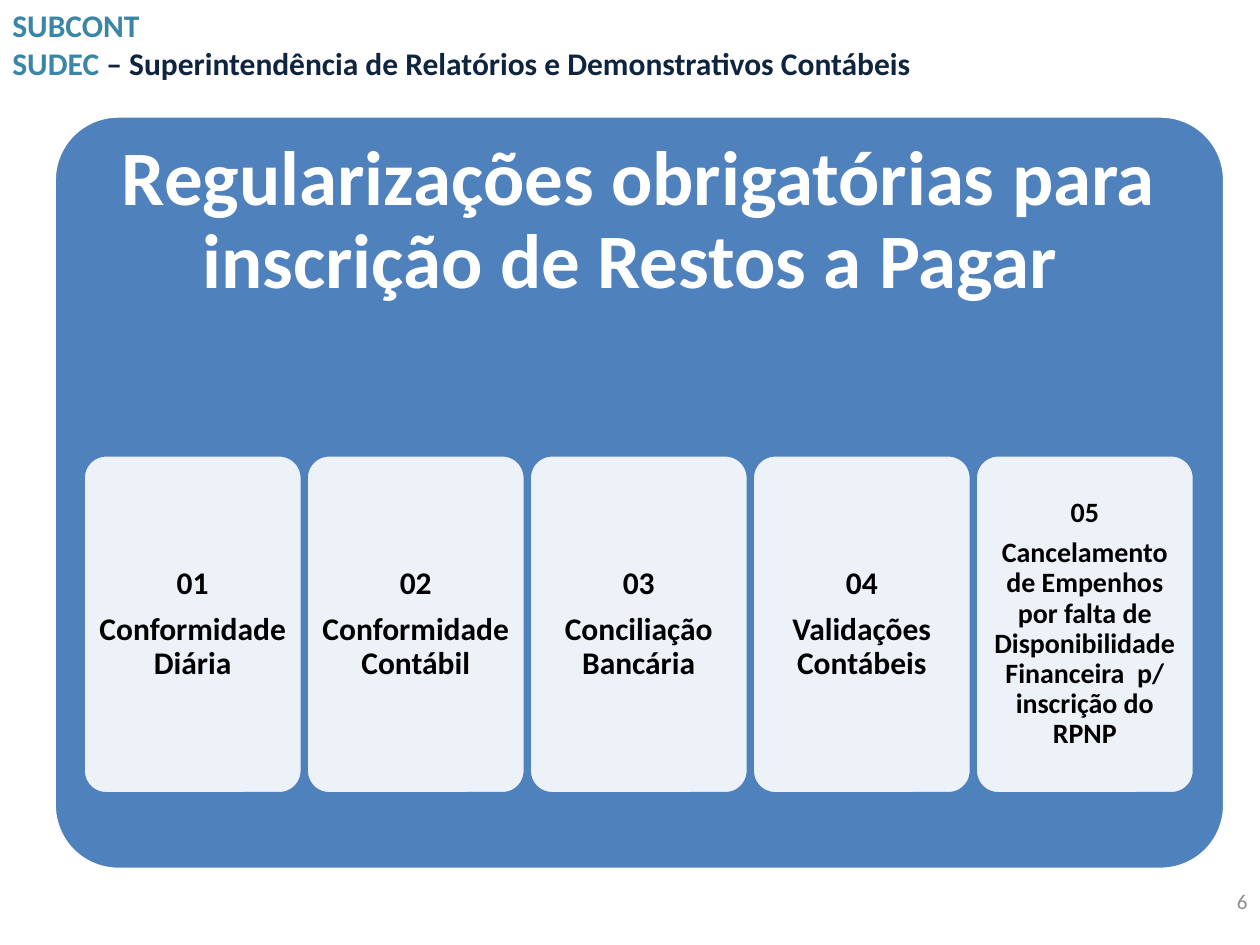
from lxml import etree
from pptx import Presentation
from pptx.dml.color import RGBColor
from pptx.enum import shapes, text
from pptx.oxml.ns import qn
from pptx.util import Inches, Pt

BLUE, WHITE, BLACK = "4F81BD", "FFFFFF", "000000"


def style(paragraph, size, color, bold=True, align=text.PP_ALIGN.CENTER):
    paragraph.alignment = align
    font = paragraph.font
    font.name, font.size, font.bold = "Calibri", Pt(size), bold
    font.color.rgb = RGBColor.from_string(color)


def rounded_box(left, top, width, height, corner, fill, line):
    box = slide.shapes.add_shape(
        shapes.MSO_SHAPE.ROUNDED_RECTANGLE,
        Inches(left), Inches(top), Inches(width), Inches(height))
    box.adjustments[0] = corner
    box.shadow.inherit = False
    box.fill.solid()
    box.fill.fore_color.rgb = RGBColor.from_string(fill)
    box.line.color.rgb = RGBColor.from_string(line)
    box.line.width = Pt(2)
    return box


prs = Presentation()
prs.slide_width, prs.slide_height = Inches(10), Inches(7.5)
slide = prs.slides.add_slide(prs.slide_layouts[5])

# Blue panel, placed behind the title
panel = rounded_box(0.43, 0.92, 9.29, 5.98, 0.085, BLUE, WHITE)
title = slide.shapes.title
title._element.addprevious(panel._element)
title.left, title.top = Inches(0.43), Inches(0.92)
title.width, title.height = Inches(9.29), Inches(2.29)
frame = title.text_frame
frame.text = "Regularizações obrigatórias para inscrição de Restos a Pagar "
frame.auto_size = text.MSO_AUTO_SIZE.NONE
frame.vertical_anchor = text.MSO_ANCHOR.TOP
frame.margin_left = frame.margin_right = frame.margin_top = Inches(0.18)
frame.margin_bottom = 0
frame.paragraphs[0].line_spacing = 0.9
style(frame.paragraphs[0], 44, WHITE)

# Numbered steps
steps = [
    ("Conformidade Diária", 18),
    ("Conformidade Contábil", 18),
    ("Conciliação Bancária", 18),
    ("Validações Contábeis", 18),
    ("Cancelamento de Empenhos por falta de Disponibilidade "
     "Financeira  p/ inscrição do RPNP", 16),
]
for i, (step, size) in enumerate(steps):
    card = rounded_box(0.66 + 1.77 * i, 3.61, 1.74, 2.69, 0.105, WHITE, BLUE)
    fill_color = card._element.spPr.find(qn("a:solidFill"))[0]
    etree.SubElement(fill_color, qn("a:alpha"), val="90000")
    frame = card.text_frame
    frame.word_wrap = True
    frame.vertical_anchor = text.MSO_ANCHOR.MIDDLE
    frame.margin_left = frame.margin_right = Inches(0.07)
    frame.margin_top = frame.margin_bottom = Inches(0.07)
    frame.text = f"{i + 1:02d}\n{step}"
    for paragraph in frame.paragraphs:
        paragraph.line_spacing = 0.9
        paragraph.space_after = Pt(size * 0.35)
        style(paragraph, size, BLACK)

# Page number
page = slide.shapes.add_textbox(Inches(9.39), Inches(6.95), Inches(0.61), Inches(0.4))
page.text_frame.text = "6"
page.text_frame.word_wrap = True
page.text_frame.vertical_anchor = text.MSO_ANCHOR.MIDDLE
style(page.text_frame.paragraphs[0], 12, "8C8C8C", False, text.PP_ALIGN.RIGHT)

# Department header
header = slide.shapes.add_textbox(0, 0, Inches(10), Inches(0.71))
header.text_frame.word_wrap = True
header.text_frame.text = "SUBCONT\nSUDEC"
for paragraph in header.text_frame.paragraphs:
    style(paragraph, 18, "3B86A6", align=text.PP_ALIGN.LEFT)
department = header.text_frame.paragraphs[1].add_run()
department.text = " – Superintendência de Relatórios e Demonstrativos Contábeis"
department.font.color.rgb = RGBColor.from_string("0F243E")

prs.save("out.pptx")
